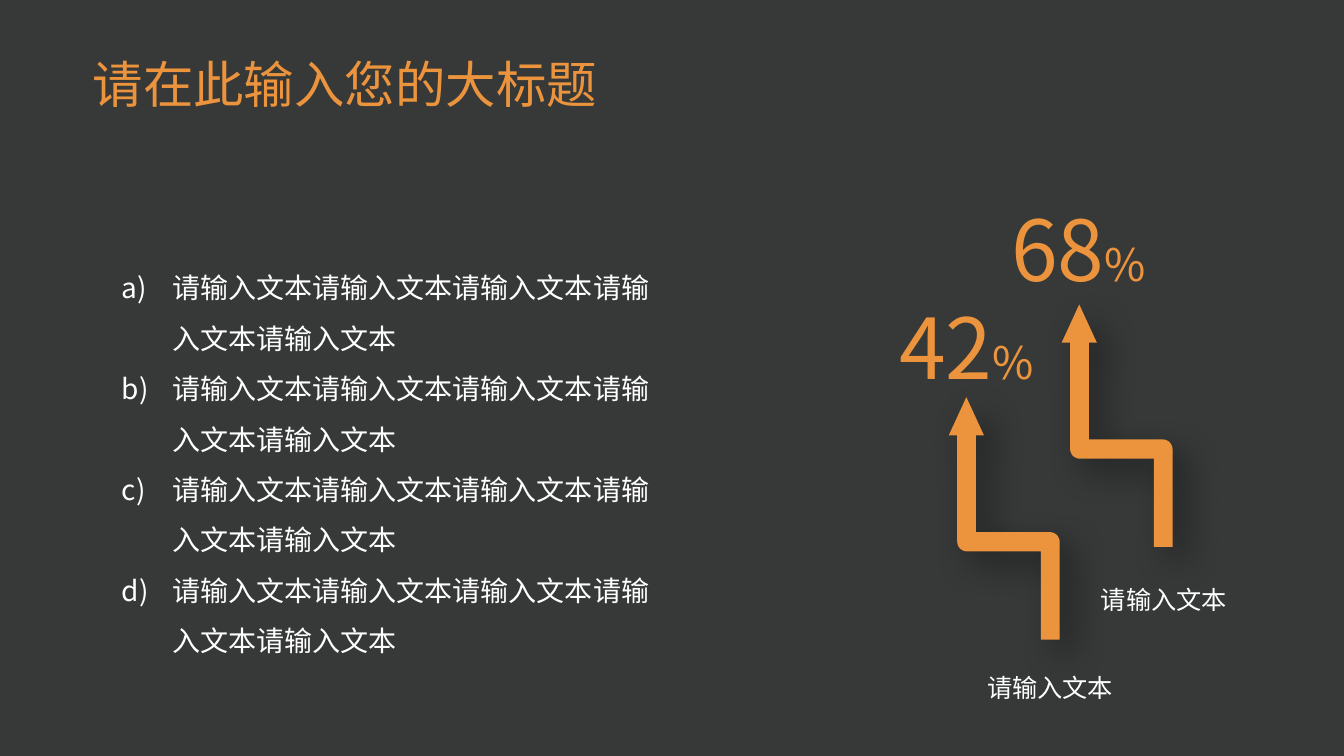
from math import cos, radians, sin

from pptx import Presentation
from pptx.dml.color import RGBColor as Rgb
from pptx.enum.text import MSO_ANCHOR as Anchor, MSO_AUTO_SIZE as Fit, PP_ALIGN as Align
from pptx.oxml import parse_xml
from pptx.oxml.ns import nsdecls, qn
from pptx.util import Inches, Pt

WIDE, HIGH = Inches(13.33), Inches(7.5)
FONT = "Noto Sans CJK SC"
HUES = {"back": "373838", "gold": "EB943D", "white": "FFFFFF", "black": "000000"}
LABEL = "请输入文本"

# Value, then left and top of number, arrow and label in percent of the slide
STEPS = [
    ("42", (64.89, 39.07), (70.59, 52.53), (70.97, 86.4)),
    ("68", (73.22, 26.13), (78.99, 40.27), (79.44, 74.8)),
]


def area(left, top, width, height):
    """Turn percentages of the slide into lengths."""
    return [round(share * side / 100) for share, side in
            zip((left, top, width, height), (WIDE, HIGH, WIDE, HIGH))]


def style(run, size, hue):
    run.font.name = FONT
    run.font.size = Pt(size)
    run.font.color.rgb = Rgb.from_string(HUES[hue])
    east = run.font._element.makeelement(qn("a:ea"), {"typeface": FONT})
    run.font._element.find(qn("a:latin")).addnext(east)


def add_text(slide, place, anchor=Anchor.MIDDLE):
    frame = slide.shapes.add_textbox(*area(*place)).text_frame
    frame.word_wrap = True
    frame.vertical_anchor = anchor
    return frame


def add_title(slide, text):
    title = slide.shapes.title
    title.left, title.top, title.width, title.height = area(6.15, 5.33, 87.62, 12.4)
    frame = title.text_frame
    frame.text = text
    frame.vertical_anchor = Anchor.MIDDLE
    para = frame.paragraphs[0]
    para.alignment = Align.LEFT
    para.line_spacing = 0.9
    style(para.runs[0], 36, "gold")


def add_list(slide, items):
    frame = add_text(slide, (8.33, 26.4, 41.56, 67.73))
    frame.text = "\n".join(items)
    for para in frame.paragraphs:
        para.line_spacing = 1.5
        style(para.runs[0], 20, "white")
        props = para._p.get_or_add_pPr()
        props.set("marL", str(Inches(0.5)))
        props.set("indent", str(-Inches(0.5)))
        props.append(parse_xml(
            f'<a:buFont {nsdecls("a")} typeface="+mj-lt"/>'))
        props.append(parse_xml(
            f'<a:buAutoNum {nsdecls("a")} type="alphaLcParenR"/>'))


def add_number(slide, spot, value):
    frame = add_text(slide, (*spot, 14.03, 14.27), Anchor.TOP)
    frame.margin_left = frame.margin_right = 0
    frame.margin_top = frame.margin_bottom = 0
    frame.auto_size = Fit.SHAPE_TO_FIT_TEXT
    para = frame.paragraphs[0]
    para.alignment = Align.CENTER
    for text, size in ((value, 60), ("%", 32)):
        run = para.add_run()
        run.text = text
        style(run, size, "gold")


def add_label(slide, spot):
    frame = add_text(slide, (*spot, 14.33, 7.07))
    frame.text = LABEL
    para = frame.paragraphs[0]
    para.alignment = Align.CENTER
    para.line_spacing = 1.5
    style(para.runs[0], 18, "white")


def bend(x, y, radius, start):
    """Quarter circle about (x, y), clockwise from the start angle."""
    turns = [radians(start + step) for step in range(0, 91, 10)]
    return [(x + radius * cos(turn), y + radius * sin(turn)) for turn in turns]


def add_arrow(slide, spot):
    # Outline in thousandths of an inch from the top left corner
    points = [
        (350, 380), (270, 380), (270, 1340),
        *bend(1005, 1435, 95, 270),
        (1100, 2405), (915, 2405), (915, 1530),
        *bend(180, 1435, 95, 90),
        (85, 380), (0, 380),
    ]
    pen = slide.shapes.build_freeform(175, 0, scale=914.4)
    pen.add_line_segments(points, close=True)
    left, top, _, _ = area(*spot, 0, 0)
    arrow = pen.convert_to_shape(left, top)
    arrow.fill.solid()
    arrow.fill.fore_color.rgb = Rgb.from_string(HUES["gold"])
    arrow.line.fill.background()
    # Soft shadow to the lower right
    arrow.shadow.inherit = False
    glow = arrow._element.spPr.find(qn("a:effectLst"))
    glow.append(parse_xml(
        f'<a:outerShdw {nsdecls("a")} blurRad="{Pt(25)}" dist="{Pt(13)}" '
        f'dir="2700000" algn="tl" rotWithShape="0">'
        f'<a:srgbClr val="{HUES["black"]}"><a:alpha val="40000"/></a:srgbClr>'
        f'</a:outerShdw>'))


def main():
    deck = Presentation()
    deck.slide_width, deck.slide_height = WIDE, HIGH
    slide = deck.slides.add_slide(deck.slide_layouts[5])
    back = slide.background.fill
    back.solid()
    back.fore_color.rgb = Rgb.from_string(HUES["back"])

    add_title(slide, "请在此输入您的大标题")
    add_list(slide, [LABEL * 5] * 4)
    for value, number, arrow, label in STEPS:
        add_arrow(slide, arrow)
        add_number(slide, number, value)
        add_label(slide, label)
    deck.save("out.pptx")


if __name__ == "__main__":
    main()
